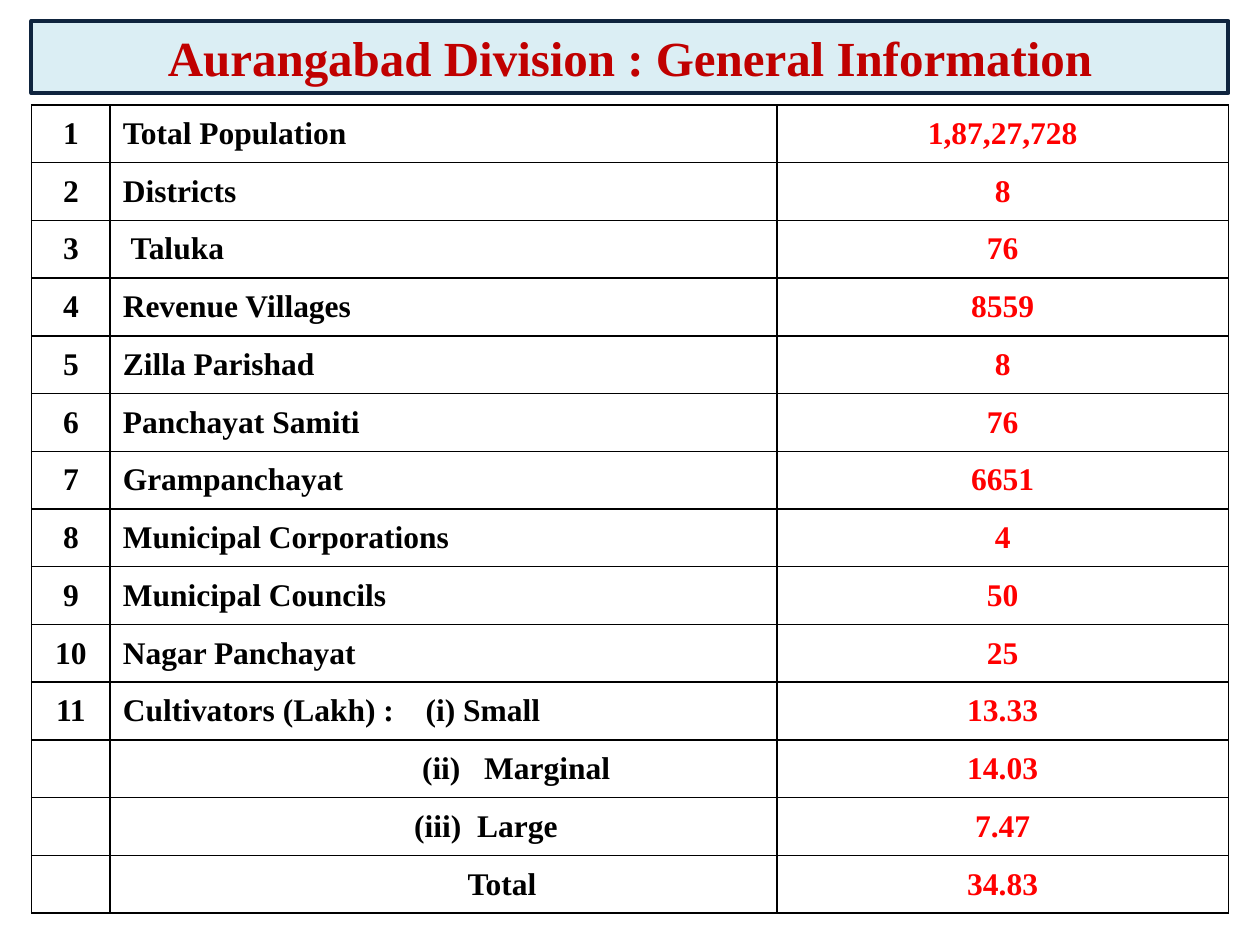
from lxml.etree import SubElement
from pptx import Presentation
from pptx.dml.color import RGBColor
from pptx.enum.shapes import MSO_SHAPE
from pptx.enum.text import MSO_ANCHOR, PP_ALIGN
from pptx.oxml.ns import qn
from pptx.util import Pt

TITLE = "Aurangabad Division : General Information"
# number, label, value, label indent, tab stop after the indent (points)
ROWS = [
    ("1", "Total Population", "1,87,27,728", 0, None),
    ("2", "Districts", "8", 0, None),
    ("3", "Taluka", "76", 4.5, None),
    ("4", "Revenue Villages", "8559", 0, None),
    ("5", "Zilla Parishad", "8", 0, None),
    ("6", "Panchayat Samiti", "76", 0, None),
    ("7", "Grampanchayat", "6651", 0, None),
    ("8", "Municipal Corporations", "4", 0, None),
    ("9", "Municipal Councils", "50", 0, None),
    ("10", "Nagar Panchayat", "25", 0, None),
    ("11", "Cultivators (Lakh) :\t(i) Small", "13.33", 0, 173),
    ("", "(ii)\tMarginal", "14.03", 171, 35.5),
    ("", "(iii)\tLarge", "7.47", 166.5, 36),
    ("", "Total", "34.83", 197, None),
]
COLORS = {
    "title": "C00000", "title fill": "DBEEF4", "title line": "0F243E",
    "label": "000000", "value": "FF0000", "border": "000000",
}
FONT = "Times New Roman"
LEFT, WIDTH = 18, 684
TABLE_TOP, TABLE_HEIGHT = 59.9, 462
COLUMN_WIDTHS = [45, 381, 258]
CELL_MARGIN = 7.2


def rgb(name):
    return RGBColor.from_string(COLORS[name])


def style(para, size, color, align):
    para.alignment = align
    para.font.name = FONT
    para.font.size = Pt(size)
    para.font.bold = True
    para.font.color.rgb = rgb(color)


def add_borders(cell):
    properties = cell._tc.get_or_add_tcPr()
    for side in ("lnL", "lnR", "lnT", "lnB"):
        line = SubElement(properties, qn(f"a:{side}"), w=str(Pt(1)))
        fill = SubElement(line, qn("a:solidFill"))
        SubElement(fill, qn("a:srgbClr"), val=COLORS["border"])


def add_tab_stop(para, position):
    stops = SubElement(para._p.get_or_add_pPr(), qn("a:tabLst"))
    SubElement(stops, qn("a:tab"), pos=str(Pt(position)), algn="l")


def fill_cell(cell, text, color, align, indent=0, tab=None):
    add_borders(cell)
    cell.fill.background()
    cell.vertical_anchor = MSO_ANCHOR.MIDDLE
    cell.margin_left = Pt(CELL_MARGIN + indent)
    cell.text = text
    para = cell.text_frame.paragraphs[0]
    if tab is not None:
        add_tab_stop(para, tab)
    style(para, 18, color, align)


def add_information_table(page):
    table = page.shapes.add_table(
        len(ROWS), len(COLUMN_WIDTHS), Pt(LEFT), Pt(TABLE_TOP),
        Pt(WIDTH), Pt(TABLE_HEIGHT)).table
    table.first_row = False
    table.horz_banding = False
    for column, width in zip(table.columns, COLUMN_WIDTHS):
        column.width = Pt(width)
    for index, (number, label, value, indent, tab) in enumerate(ROWS):
        table.rows[index].height = Pt(TABLE_HEIGHT / len(ROWS))
        fill_cell(table.cell(index, 0), number, "label", PP_ALIGN.CENTER)
        fill_cell(table.cell(index, 1), label, "label", PP_ALIGN.LEFT, indent, tab)
        fill_cell(table.cell(index, 2), value, "value", PP_ALIGN.CENTER)


def add_title(page):
    box = page.shapes.add_shape(
        MSO_SHAPE.RECTANGLE, Pt(LEFT), Pt(12), Pt(WIDTH), Pt(41.2))
    box.shadow.inherit = False
    box.fill.solid()
    box.fill.fore_color.rgb = rgb("title fill")
    box.line.color.rgb = rgb("title line")
    box.line.width = Pt(2.25)
    box.text_frame.word_wrap = True
    box.text_frame.text = TITLE
    style(box.text_frame.paragraphs[0], 28, "title", PP_ALIGN.CENTER)


def main():
    deck = Presentation()
    deck.slide_width, deck.slide_height = Pt(720), Pt(540)
    page = deck.slides.add_slide(deck.slide_layouts[6])
    add_information_table(page)
    add_title(page)
    deck.save("out.pptx")


if __name__ == "__main__":
    main()
